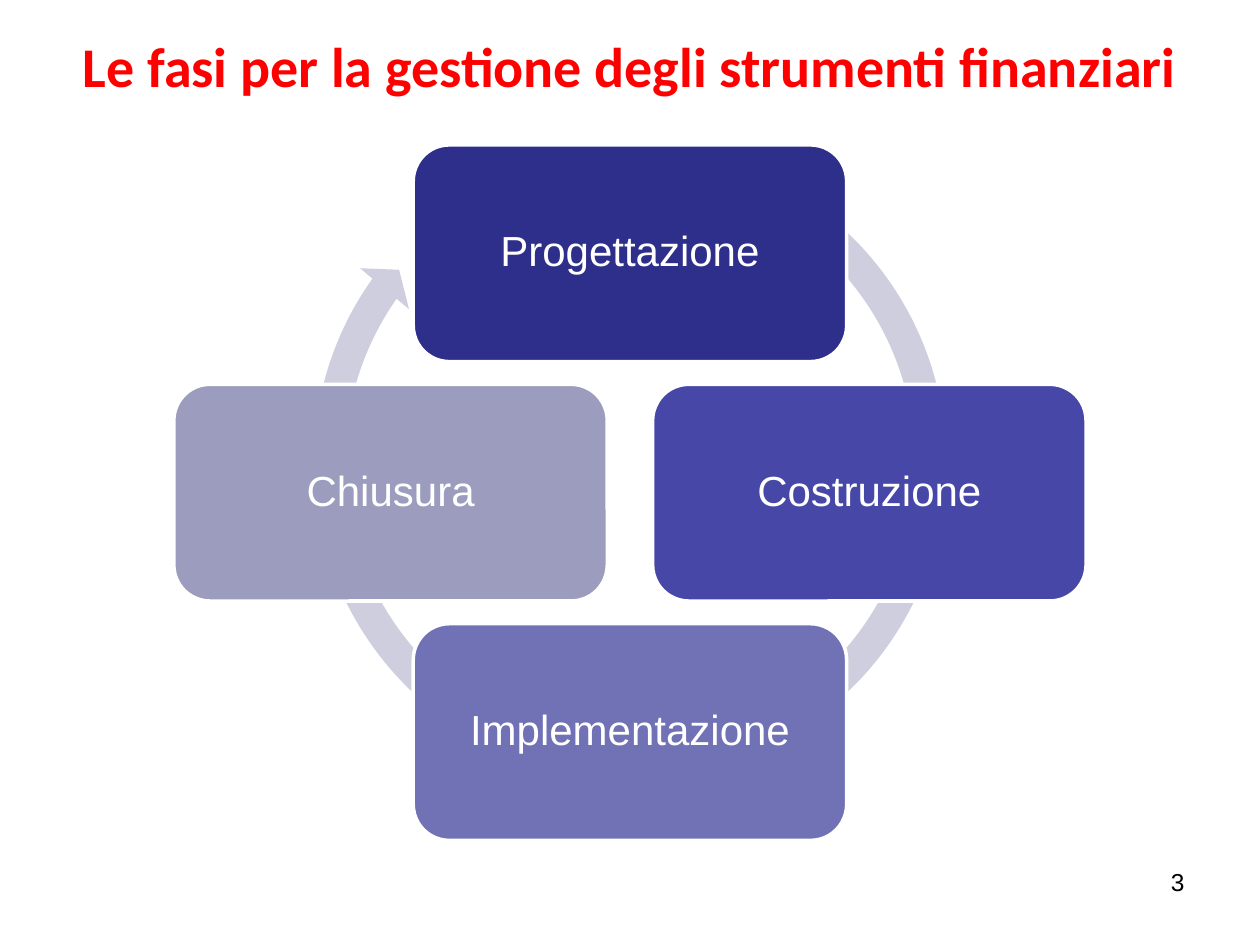
from pptx import Presentation
from pptx.dml.color import RGBColor
from pptx.enum.shapes import MSO_SHAPE
from pptx.enum.text import MSO_ANCHOR, PP_ALIGN
from pptx.util import Inches, Pt

ROUNDED, CIRCULAR_ARROW = MSO_SHAPE.ROUNDED_RECTANGLE, MSO_SHAPE.CIRCULAR_ARROW
TOP, MIDDLE = MSO_ANCHOR.TOP, MSO_ANCHOR.MIDDLE
CENTER, RIGHT = PP_ALIGN.CENTER, PP_ALIGN.RIGHT

COLORS = {
    "title": "FF0000", "number": "000000", "white": "FFFFFF", "arrow": "CECEDE",
    "Progettazione": "2E2E8B", "Costruzione": "4747A8",
    "Implementazione": "7171B5", "Chiusura": "9C9CBF",
}


def write(shape, text, size, color, font="Arial", bold=False, align=CENTER,
          anchor=MIDDLE, line_spacing=1.0):
    frame = shape.text_frame
    frame.word_wrap = True
    frame.vertical_anchor = anchor
    paragraph = frame.paragraphs[0]
    paragraph.alignment = align
    paragraph.line_spacing = line_spacing
    run = paragraph.add_run()
    run.text = text
    run.font.name = font
    run.font.size = Pt(size)
    run.font.bold = bold
    run.font.color.rgb = RGBColor.from_string(COLORS[color])


def add_filled(kind, center_x, center_y, width, height, color):
    """Add a preset shape around its centre, in inches."""
    shape = slide.shapes.add_shape(
        kind, Inches(center_x - width / 2), Inches(center_y - height / 2),
        Inches(width), Inches(height))
    shape.shadow.inherit = False
    shape.fill.solid()
    shape.fill.fore_color.rgb = RGBColor.from_string(COLORS[color])
    shape.line.fill.background()
    return shape


presentation = Presentation()
presentation.slide_width, presentation.slide_height = Inches(10), Inches(7.5)
slide = presentation.slides.add_slide(presentation.slide_layouts[6])

title = slide.shapes.add_textbox(Inches(0.5), Inches(0.13), Inches(9), Inches(0.77))
write(title, "Le fasi per la gestione degli strumenti finanziari", 32, "title",
      font="Calibri", bold=True)

number = slide.shapes.add_textbox(Inches(7.17), Inches(6.83), Inches(2.33), Inches(0.52))
write(number, "3", 14, "number", align=RIGHT, anchor=TOP)

# Ring arrow: thickness, head angle, end angle, start angle, head width.
# An angle adjustment of 0.6 is one degree.
arrow = add_filled(CIRCULAR_ARROW, 5, 3.67, 5.28, 5.28, "arrow")
for index, value in enumerate((0.047, 4.55 * 0.6, 215.29 * 0.6, 299.54 * 0.6, 0.048)):
    arrow.adjustments[index] = value

# Phases sit clockwise on a circle, a quarter turn apart.
CYCLE_X, CYCLE_Y, RADIUS = 5, 3.91, 1.9
PHASES = {
    "Progettazione": (0, -1),
    "Costruzione": (1, 0),
    "Implementazione": (0, 1),
    "Chiusura": (-1, 0),
}
for phase, (column, row) in PHASES.items():
    box = add_filled(ROUNDED, CYCLE_X + column * RADIUS, CYCLE_Y + row * RADIUS,
                     3.44, 1.72, phase)
    box.line.color.rgb = RGBColor.from_string(COLORS["white"])
    box.line.width = Pt(2)
    write(box, phase, 24, "white", line_spacing=0.9)

presentation.save("out.pptx")
